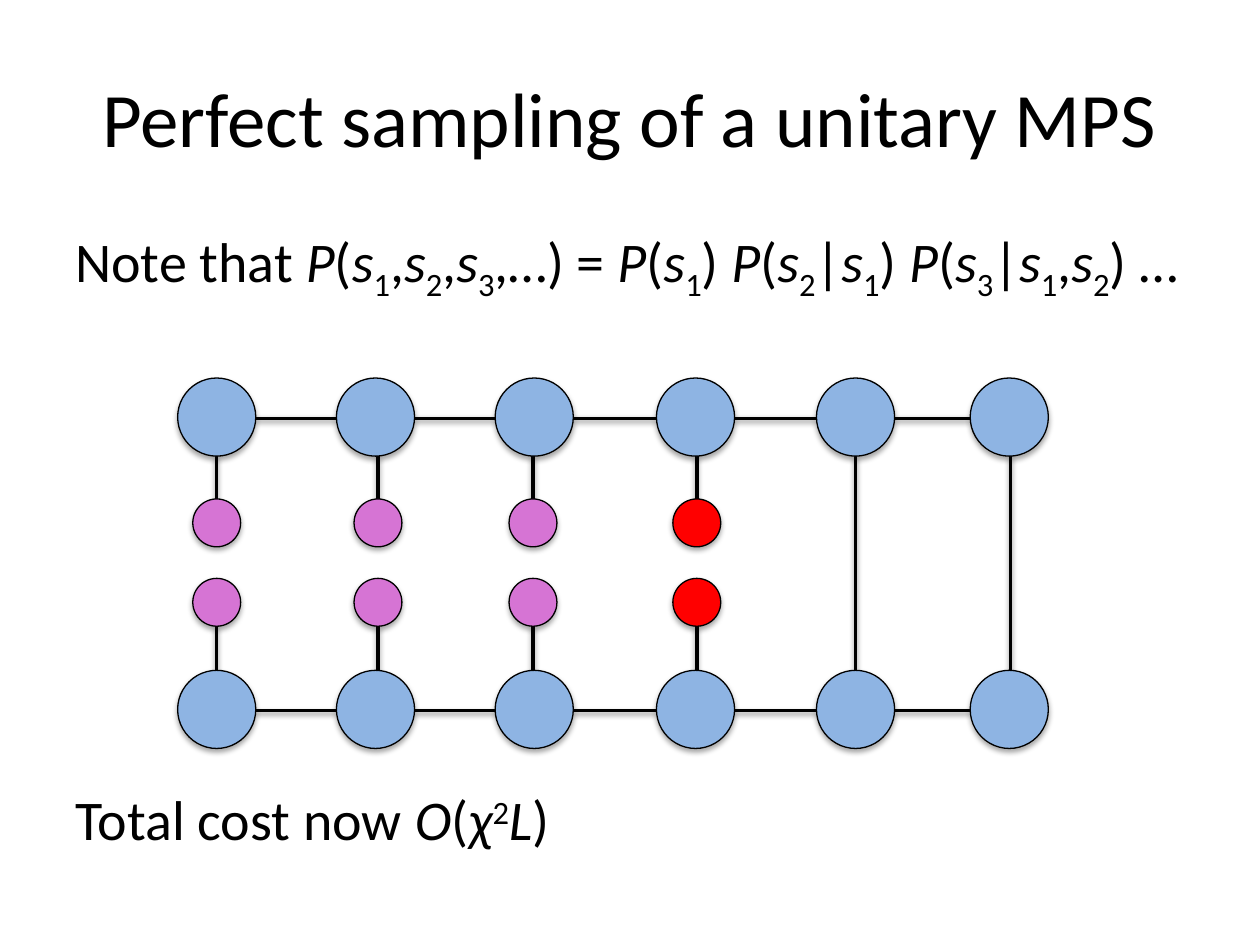
from lxml.etree import SubElement
from pptx import Presentation
from pptx.dml.color import RGBColor
from pptx.enum.shapes import MSO_CONNECTOR, MSO_SHAPE
from pptx.enum.text import MSO_ANCHOR, PP_ALIGN
from pptx.oxml.ns import qn
from pptx.util import Inches, Pt

TITLE = "Perfect sampling of a unitary MPS"
FORMULA = ("Note that /*P/(/*s/_1/,/*s/_2/,/*s/_3/,…) = /*P/(/*s/_1/) /*P/(/*s/_2/|/*s/_1/) "
           "/*P/(/*s/_3/|/*s/_1/,/*s/_2/) …")
COST = "Total cost now /*O/(/*χ/^2/*L/)"

THEME = dict(font="Calibri", title=44, body=32, ink="000000",
             tensor="8EB4E3", fixed="D674D4", current="FF0000",
             outline=0.75, bond=2)
BASELINE = {"_": "-25000", "^": "30000"}

TENSOR_D, SITE_D = 0.62, 0.38
TENSOR_TOPS = (3, 5.32)
SITE_TOPS = (3.96, 4.59)
TENSOR_LEFTS = (1.41, 2.67, 3.93, 5.21, 6.48, 7.7)
LEGS = ((1.72, "fixed"), (3, "fixed"), (4.23, "fixed"),
        (5.53, "current"), (6.79, None), (8.02, None))


def add_text(s, text, x, y, w, h, size, align=PP_ALIGN.LEFT, anchor=MSO_ANCHOR.TOP):
    tf = s.shapes.add_textbox(Inches(x), Inches(y), Inches(w), Inches(h)).text_frame
    tf.word_wrap = True
    tf.vertical_anchor = anchor
    p = tf.paragraphs[0]
    p.alignment = align
    for part in text.split("/"):
        mark = part[0] if part[0] in "*_^" else ""
        r = p.add_run()
        r.text = part[len(mark):]
        r.font.name = THEME["font"]
        r.font.size = Pt(size)
        r.font.color.rgb = RGBColor.from_string(THEME["ink"])
        r.font.italic = mark == "*"
        if mark in BASELINE:
            r.font._element.set("baseline", BASELINE[mark])


def add_shadow(sp, alpha, dist):
    effects = SubElement(sp._element.spPr, qn("a:effectLst"))
    shadow = SubElement(effects, qn("a:outerShdw"), blurRad=str(Pt(3.1)),
                        dist=str(Pt(dist)), dir="5400000", rotWithShape="0")
    color = SubElement(shadow, qn("a:srgbClr"), val=THEME["ink"])
    SubElement(color, qn("a:alpha"), val=str(alpha * 1000))


def set_line(sp, width):
    sp.line.color.rgb = RGBColor.from_string(THEME["ink"])
    sp.line.width = Pt(width)


def add_bond(s, x1, y1, x2, y2):
    sp = s.shapes.add_connector(MSO_CONNECTOR.STRAIGHT, *map(Inches, (x1, y1, x2, y2)))
    set_line(sp, THEME["bond"])
    add_shadow(sp, 38, 1.6)


def add_node(s, x, y, d, fill):
    sp = s.shapes.add_shape(MSO_SHAPE.OVAL, *map(Inches, (x, y, d, d)))
    sp.fill.solid()
    sp.fill.fore_color.rgb = RGBColor.from_string(THEME[fill])
    set_line(sp, THEME["outline"])
    add_shadow(sp, 35, 1.8)


def main():
    prs = Presentation()
    prs.slide_width, prs.slide_height = Inches(10), Inches(7.5)
    s = prs.slides.add_slide(prs.slide_layouts[6])
    add_text(s, TITLE, 0.5, 0.3, 9, 1.25, THEME["title"], PP_ALIGN.CENTER, MSO_ANCHOR.MIDDLE)
    add_text(s, FORMULA, 0.5, 1.75, 9.2, 0.65, THEME["body"])
    add_text(s, COST, 0.5, 6.18, 9.2, 0.65, THEME["body"])

    upper, lower = TENSOR_TOPS[0] + TENSOR_D, TENSOR_TOPS[1]
    for top in TENSOR_TOPS:
        for left, right in zip(TENSOR_LEFTS, TENSOR_LEFTS[1:]):
            add_bond(s, left + TENSOR_D, top + 0.32, right, top + 0.32)
    for x, state in LEGS:
        if state:
            add_bond(s, x, upper, x, SITE_TOPS[0])
            add_bond(s, x, lower, x, SITE_TOPS[1] + SITE_D)
            for top in SITE_TOPS:
                add_node(s, x - SITE_D / 2, top, SITE_D, state)
        else:
            add_bond(s, x, upper, x, lower)
    for top in TENSOR_TOPS:
        for left in TENSOR_LEFTS:
            add_node(s, left, top, TENSOR_D, "tensor")
    prs.save("out.pptx")


if __name__ == "__main__":
    main()
